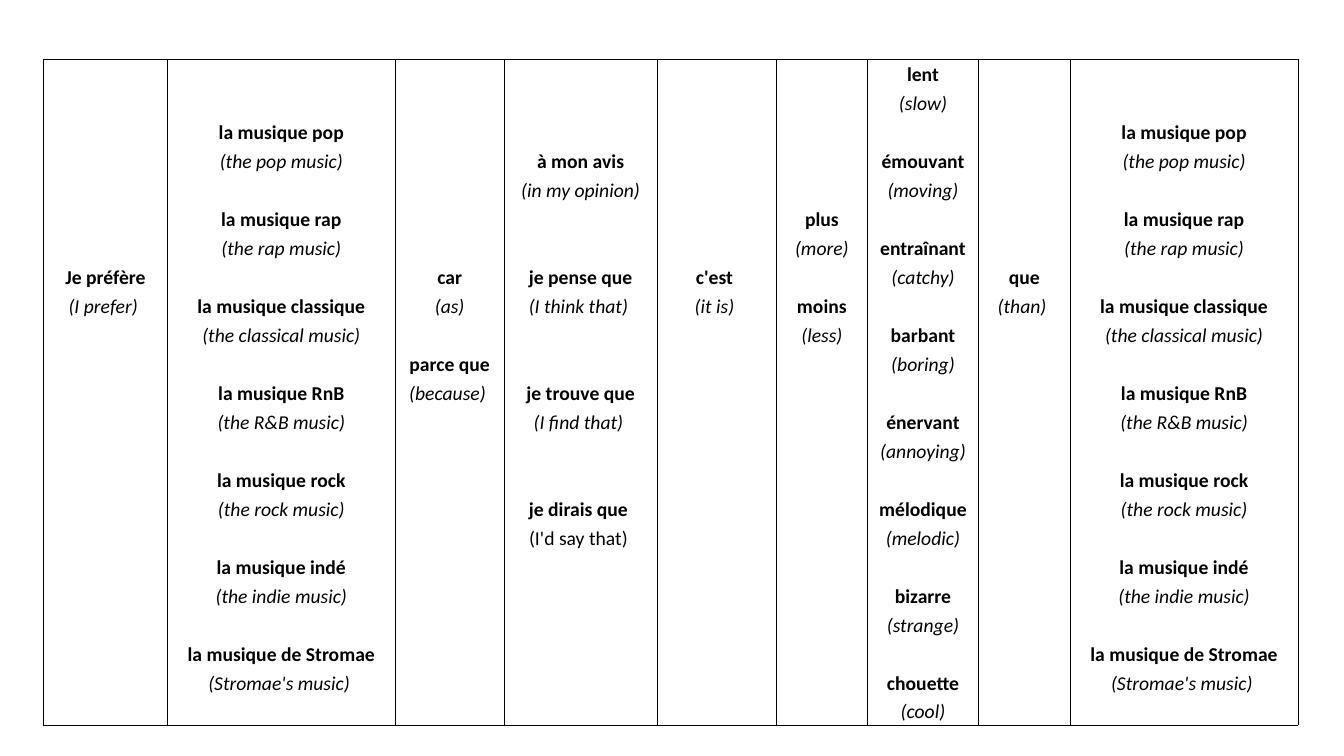
"""Build a French sentence-builder slide for comparing kinds of music."""
from lxml import etree
from pptx import Presentation
from pptx import util as u
from pptx.dml import color
from pptx.enum import text
from pptx.oxml import ns

COLOURS = {"ink": "000000"}
ROW_COUNT = 23
LEFT, TOP = 3.23, 7.87
ROW_SHARE, LAST_ROW_SHARE = 3.84, 3.6

MUSIC = [
    ("la musique pop", "(the pop music)"),
    ("la musique rap", "(the rap music)"),
    ("la musique classique", "(the classical music)"),
    ("la musique RnB", "(the R&B music)"),
    ("la musique rock", "(the rock music)"),
    ("la musique indé", "(the indie music)"),
    ("la musique de Stromae", "(Stromae's music) "),
]
OPINIONS = [
    ("à mon avis", "(in my opinion)"),
    ("je pense que", "(I think that) "),
    ("je trouve que", "(I find that) "),
    ("je dirais que ", "(I'd say that) "),
]
ADJECTIVES = [
    ("lent", "(slow)"),
    ("émouvant", "(moving)"),
    ("entraînant", "(catchy)"),
    ("barbant", "(boring)"),
    ("énervant", "(annoying)"),
    ("mélodique", "(melodic)"),
    ("bizarre", "(strange)"),
    ("chouette", "(cool)"),
]
UPRIGHT = {"(I'd say that) "}

COLUMNS = [
    (9.23, 7, 3, [("Je préfère", "(I prefer) ")]),
    (16.95, 2, 3, MUSIC),
    (8.1, 7, 3, [("car", "(as)"), ("parce que", "(because) ")]),
    (11.4, 3, 4, OPINIONS),
    (8.85, 7, 3, [("c'est ", "(it is) ")]),
    (6.8, 5, 3, [("plus", "(more)"), ("moins", "(less)")]),
    (8.25, 0, 3, ADJECTIVES),
    (6.83, 7, 3, [("que", "(than) ")]),
    (16.95, 2, 3, MUSIC),
]


class Board:
    def __init__(self, deck):
        self.deck = deck
        self.page = deck.slides.add_slide(deck.slide_layouts[6])
        self.font, self.size = "Calibri", 14

    def across(self, share):
        return round(self.deck.slide_width * share / 100)

    def down(self, share):
        return round(self.deck.slide_height * share / 100)

    def table(self, left, top, widths, heights):
        frame = self.page.shapes.add_table(
            len(heights), len(widths), self.across(left), self.down(top),
            self.across(sum(widths)), self.down(sum(heights)))
        table = frame.table
        table.first_row = table.horz_banding = False
        for column, width in zip(table.columns, widths):
            column.width = self.across(width)
        for row, height in zip(table.rows, heights):
            row.height = self.down(height)
        for index, row in enumerate(table.rows):
            sides = {"L": True, "R": True, "T": index == 0,
                     "B": index == len(heights) - 1}
            for cell in row.cells:
                self.cell(cell, sides)
        return table

    def cell(self, cell, sides):
        cell.margin_left = cell.margin_right = cell.margin_top = u.Inches(0.01)
        cell.margin_bottom = 0
        cell.vertical_anchor = text.MSO_ANCHOR.MIDDLE
        cell.fill.background()
        properties = cell._tc.get_or_add_tcPr()
        for position, (side, visible) in enumerate(sides.items()):
            line = etree.Element(ns.qn(f"a:ln{side}"), w=str(u.Pt(0.5)))
            if visible:
                fill = etree.SubElement(line, ns.qn("a:solidFill"))
                etree.SubElement(fill, ns.qn("a:srgbClr"), val=COLOURS["ink"])
            else:
                etree.SubElement(line, ns.qn("a:noFill"))
            properties.insert(position, line)
        para = cell.text_frame.paragraphs[0]
        para.alignment = text.PP_ALIGN.CENTER
        etree.SubElement(para._p, ns.qn("a:endParaRPr"), sz=str(self.size * 100))

    def phrase(self, cell, words, bold=False, italic=False):
        span = cell.text_frame.paragraphs[0].add_run()
        span.text = words
        span.font.name, span.font.size = self.font, u.Pt(self.size)
        span.font.bold, span.font.italic = bold, italic
        span.font.color.rgb = color.RGBColor.from_string(COLOURS["ink"])


def main():
    deck = Presentation()
    deck.slide_width, deck.slide_height = u.Inches(13.33), u.Inches(7.5)
    board = Board(deck)
    heights = [ROW_SHARE] * (ROW_COUNT - 1) + [LAST_ROW_SHARE]
    table = board.table(LEFT, TOP, [column[0] for column in COLUMNS], heights)
    for index, (_, first, step, phrases) in enumerate(COLUMNS):
        for order, (french, english) in enumerate(phrases):
            row = first + order * step
            board.phrase(table.cell(row, index), french, bold=True)
            board.phrase(table.cell(row + 1, index), english,
                         italic=english not in UPRIGHT)
    deck.save("out.pptx")


if __name__ == "__main__":
    main()
